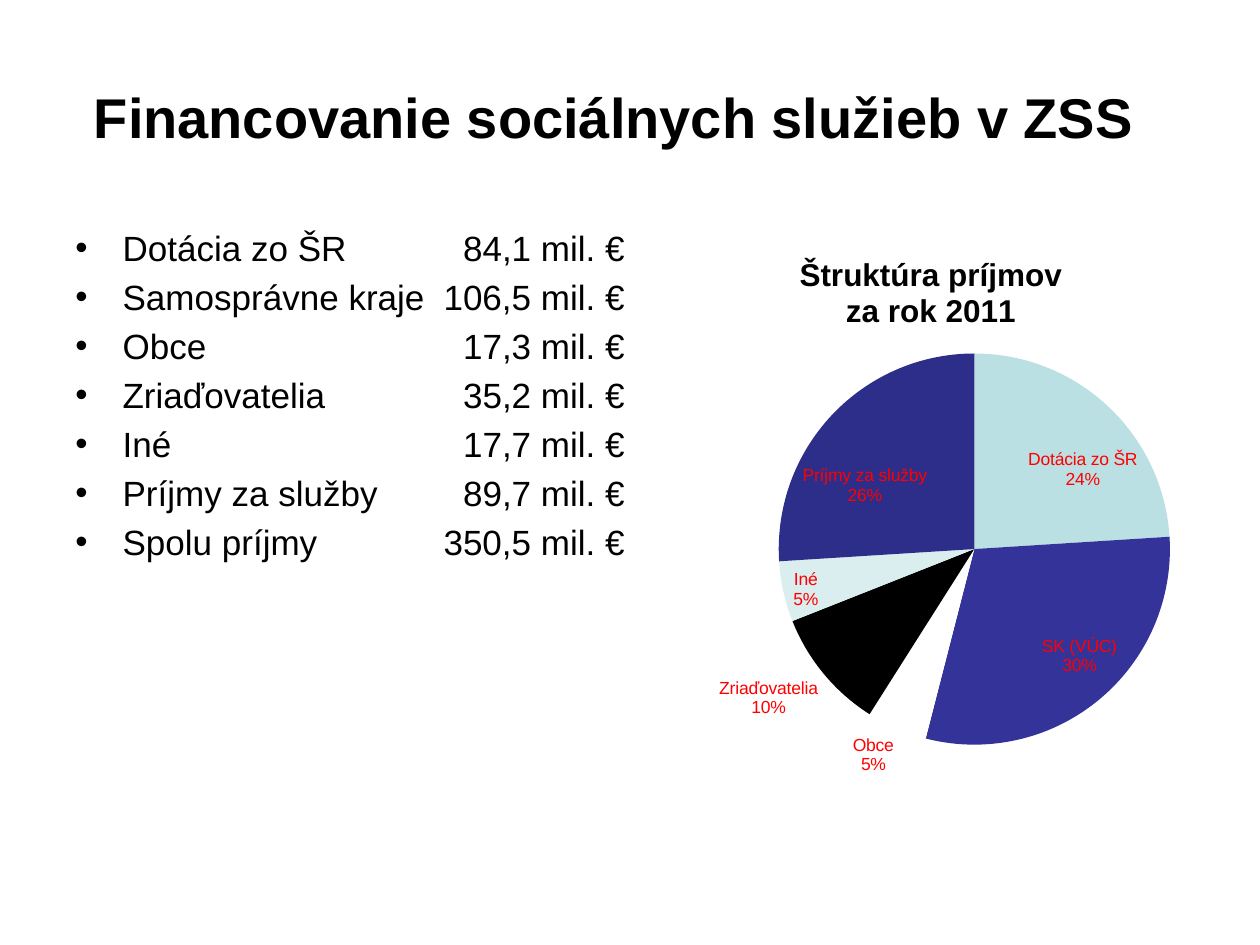
from lxml import etree
from pptx import Presentation
from pptx.chart.data import CategoryChartData
from pptx.dml.color import RGBColor
from pptx.enum.chart import XL_CHART_TYPE, XL_LABEL_POSITION
from pptx.enum.text import MSO_ANCHOR, PP_ALIGN
from pptx.oxml import parse_xml
from pptx.oxml.ns import nsdecls, qn
from pptx.util import Pt

PIE = XL_CHART_TYPE.PIE
BEST_FIT = XL_LABEL_POSITION.BEST_FIT
MIDDLE = MSO_ANCHOR.MIDDLE
CENTER = PP_ALIGN.CENTER

FONT = "Arial"
COLORS = {"text": "000000", "label": "FF0000"}
INCOME = [
    ("Dotácia zo ŠR", "84,1 mil. €"),
    ("Samosprávne kraje", "106,5 mil. €"),
    ("Obce", "17,3 mil. €"),
    ("Zriaďovatelia", "35,2 mil. €"),
    ("Iné", "17,7 mil. €"),
    ("Príjmy za služby", "89,7 mil. €"),
    ("Spolu príjmy", "350,5 mil. €"),
]
SHARES = [
    ("Dotácia zo ŠR", 24, "BBE0E3"),
    ("SK (VÚC)", 30, "333399"),
    ("Obce", 5, "FFFFFF"),
    ("Zriaďovatelia", 10, "000000"),
    ("Iné", 5, "DAEDEF"),
    ("Príjmy za služby", 26, "2D2D8A"),
]


def style_font(font, size, color="text", bold=False):
    font.name = FONT
    font.size = Pt(size)
    font.bold = bold
    font.color.rgb = RGBColor.from_string(COLORS[color])


def add_text_frame(slide, left, top, width, height):
    shape = slide.shapes.add_textbox(Pt(left), Pt(top), Pt(width), Pt(height))
    shape.text_frame.word_wrap = True
    return shape.text_frame


def add_title(slide, left, top, width, height):
    text_frame = add_text_frame(slide, left, top, width, height)
    text_frame.vertical_anchor = MIDDLE
    text_frame.text = "Financovanie sociálnych služieb v ZSS"
    paragraph = text_frame.paragraphs[0]
    paragraph.alignment = CENTER
    style_font(paragraph.runs[0].font, 32, bold=True)


def add_bullet_and_tab(paragraph, indent, tab):
    properties = paragraph._p.get_or_add_pPr()
    properties.set("marL", str(Pt(indent)))
    properties.set("indent", str(Pt(-indent)))
    bullet_font = etree.SubElement(properties, qn("a:buFont"))
    bullet_font.set("typeface", FONT)
    bullet = etree.SubElement(properties, qn("a:buChar"))
    bullet.set("char", "•")
    tabs = etree.SubElement(properties, qn("a:tabLst"))
    stop = etree.SubElement(tabs, qn("a:tab"))
    stop.set("pos", str(Pt(tab)))
    stop.set("algn", "r")


def add_income_list(slide, left, top, width, height):
    text_frame = add_text_frame(slide, left, top, width, height)
    text_frame.text = "\n".join(f"{source}\t{amount}" for source, amount in INCOME)
    for index, paragraph in enumerate(text_frame.paragraphs):
        add_bullet_and_tab(paragraph, indent=27, tab=314)
        paragraph.space_before = Pt(4 if index else 0)
        for run in paragraph.runs:
            style_font(run.font, 20)


def set_layout(element, **fractions):
    for old in element.findall(qn("c:layout")):
        element.remove(old)
    target = '<c:layoutTarget val="inner"/>' if "w" in fractions else ""
    modes = "".join(f'<c:{axis}Mode val="edge"/>' for axis in "xy")
    values = "".join(f'<c:{key} val="{value}"/>' for key, value in fractions.items())
    layout = parse_xml(
        f'<c:layout {nsdecls("c")}><c:manualLayout>'
        f"{target}{modes}{values}</c:manualLayout></c:layout>"
    )
    text = element.find(qn("c:tx"))
    if text is None:
        element.insert(0, layout)
    else:
        text.addnext(layout)


def add_income_chart(slide, left, top, width, height):
    data = CategoryChartData()
    data.categories = [name for name, _, _ in SHARES]
    data.add_series("Series 1", [share for _, share, _ in SHARES])
    frame = slide.shapes.add_chart(
        PIE, Pt(left), Pt(top), Pt(width), Pt(height), data
    )
    chart = frame.chart
    style_font(chart.font, 10)
    chart.has_legend = False

    chart.has_title = True
    title = chart.chart_title
    title.text_frame.text = "Štruktúra príjmov\nza rok 2011"
    for paragraph in title.text_frame.paragraphs:
        paragraph.alignment = CENTER
        style_font(paragraph.runs[0].font, 18, bold=True)
    title.include_in_layout = False
    set_layout(title._element, x=0.26, y=0.03)

    plot = chart.plots[0]
    plot.vary_by_categories = True
    set_layout(plot._element.getparent(), x=0.23, y=0.21, w=0.69, h=0.69)
    for index, (_, _, color) in enumerate(SHARES):
        point_format = plot.series[0].points[index].format
        point_format.fill.solid()
        point_format.fill.fore_color.rgb = RGBColor.from_string(color)
        point_format.line.fill.background()

    plot.has_data_labels = True
    labels = plot.data_labels
    style_font(labels.font, 10, "label")
    labels.number_format = "0%"
    labels.number_format_is_linked = False
    labels.show_value = False
    labels.show_category_name = True
    labels.show_percentage = True
    labels.position = BEST_FIT
    separator = etree.Element(qn("c:separator"))
    separator.text = "\n"
    labels._element.find(qn("c:showBubbleSize")).addnext(separator)


def main():
    presentation = Presentation()
    presentation.slide_width = Pt(720)
    presentation.slide_height = Pt(540)
    slide = presentation.slides.add_slide(presentation.slide_layouts[6])
    add_title(slide, 27, 21.6, 648, 90)
    add_income_list(slide, 36, 126, 648, 356.4)
    add_income_chart(slide, 370.5, 134, 324, 324)
    presentation.save("out.pptx")


if __name__ == "__main__":
    main()
